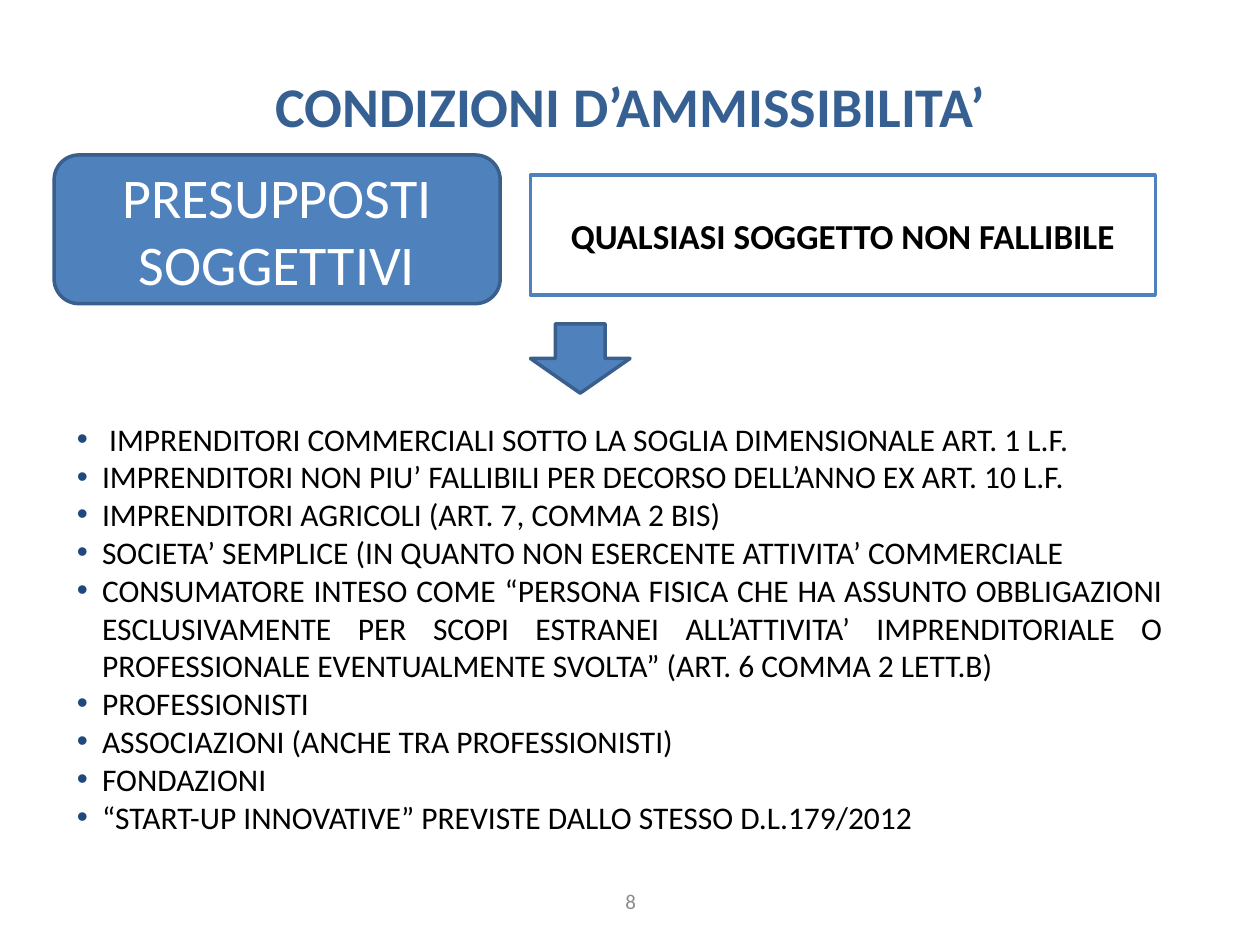
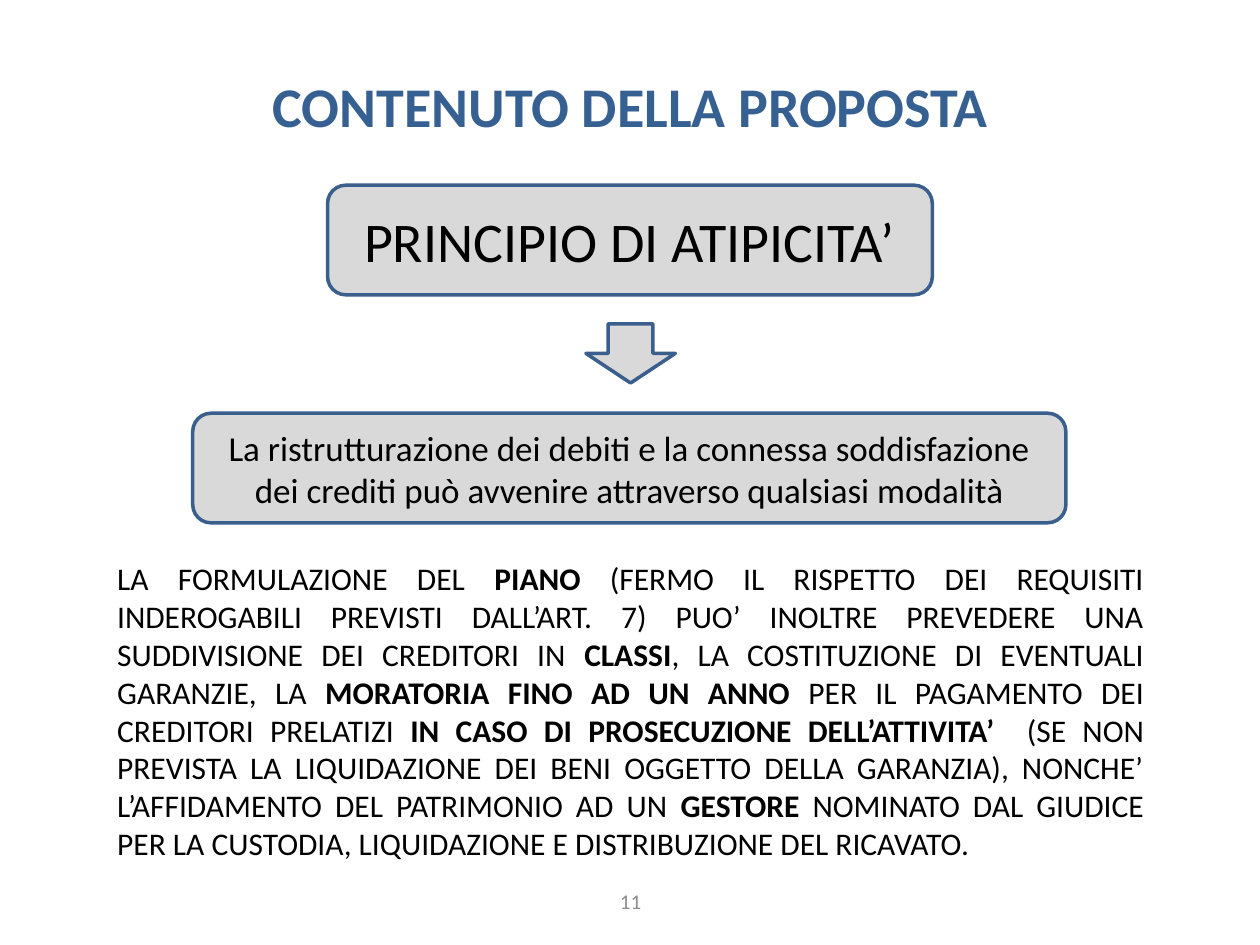
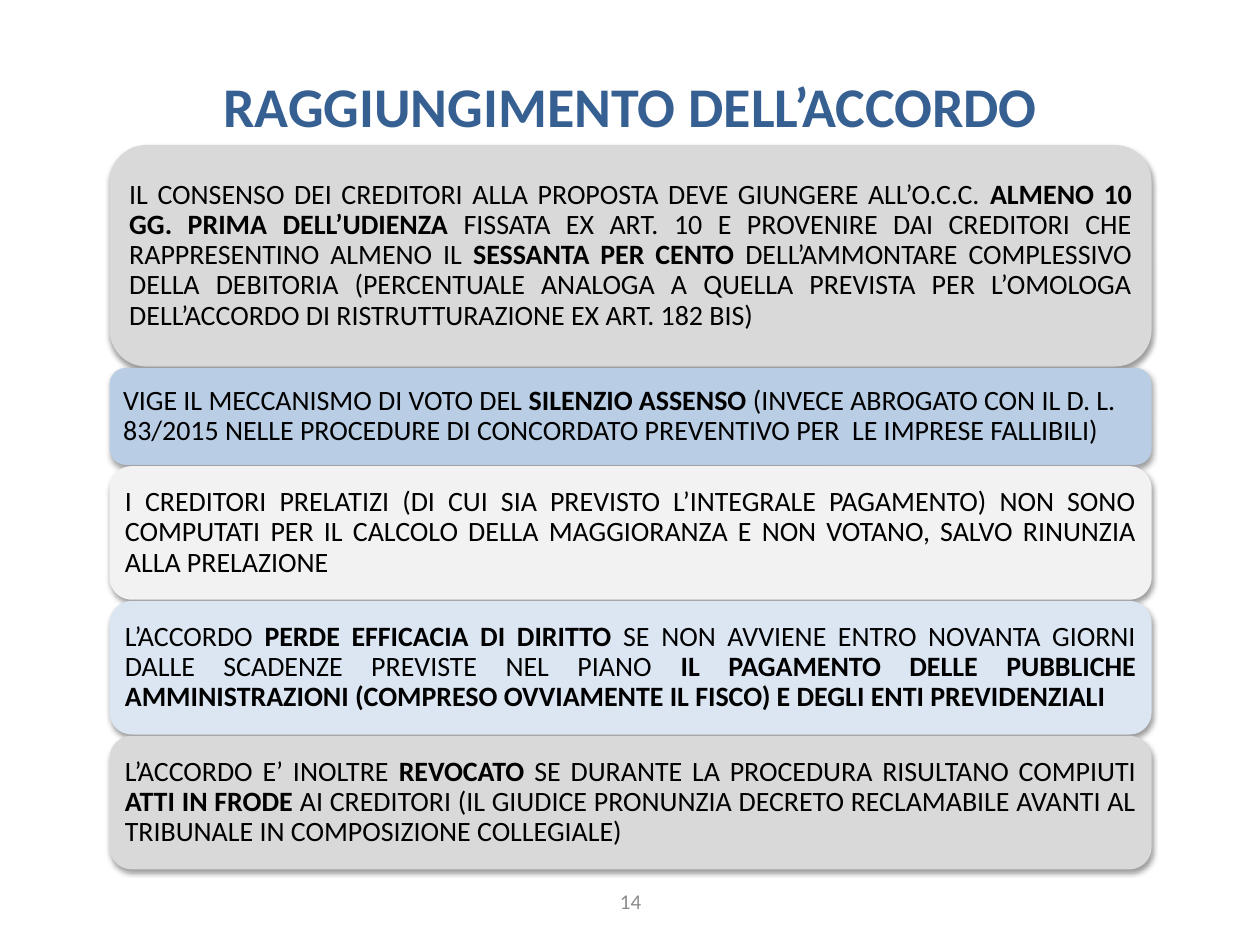
from dataclasses import dataclass

from lxml import etree
from pptx import Presentation
from pptx.dml.color import RGBColor
from pptx.enum.shapes import MSO_SHAPE
from pptx.enum.text import MSO_ANCHOR, MSO_AUTO_SIZE, PP_ALIGN
from pptx.oxml.ns import qn
from pptx.util import Inches, Pt

ROUND, RECT, ARROW = MSO_SHAPE.ROUNDED_RECTANGLE, MSO_SHAPE.RECTANGLE, MSO_SHAPE.DOWN_ARROW
CENTER, JUSTIFY, LEFT = PP_ALIGN.CENTER, PP_ALIGN.JUSTIFY, PP_ALIGN.LEFT
TOP, MIDDLE = MSO_ANCHOR.TOP, MSO_ANCHOR.MIDDLE

# Shared look
FONT = "Calibri"
BLUE, EDGE, TITLE, BULLET = "4F81BD", "3A5F8C", "376092", "1F497D"
BLACK, WHITE, GREY, PAGE = "000000", "FFFFFF", "D9D9D9", "8C8C8C"
PALE_GREY, MID_BLUE, PALE_BLUE = "F2F2F2", "B9CDE5", "DCE6F2"

# The slide is a grid of 100 columns by 75 rows
COLS, ROWS = 100, 75
prs = Presentation()
prs.slide_width, prs.slide_height = Inches(10), Inches(7.5)


@dataclass
class Box:
    col: float
    row: float
    cols: float
    rows: float

    def emu(self) -> tuple:
        w, h = prs.slide_width / COLS, prs.slide_height / ROWS
        return int(self.col * w), int(self.row * h), int(self.cols * w), int(self.rows * h)


@dataclass
class Style:
    size: float
    color: str = BLACK
    bold: bool = False
    align: PP_ALIGN = CENTER
    anchor: MSO_ANCHOR = MIDDLE
    spacing: float = 1.0
    bullet: bool = False


@dataclass
class Panel:
    box: Box
    text: str = ""
    style: Style | None = None
    kind: MSO_SHAPE = ROUND
    fill: str = GREY
    line: str | None = EDGE
    shadow: bool = False
    inset: float | None = None


TITLE_BOX, PAGE_BOX = Box(2.4, 2.1, 95.3, 12.5), Box(34.2, 69.5, 31.7, 4)
TITLE_STYLE = Style(32, TITLE, bold=True)
PAGE_STYLE = Style(12, PAGE)
LIST_STYLE = Style(18, align=JUSTIFY, anchor=TOP, bullet=True)
PROSE_STYLE = Style(18, align=JUSTIFY)
BAR_STYLE = Style(16, align=JUSTIFY, spacing=0.9)
BAR_LEFT_STYLE = Style(16, align=LEFT, spacing=0.9)


def rgb(color: str) -> RGBColor:
    return RGBColor.from_string(color)


def set_bullet(p, on: bool) -> None:
    pPr = p._p.get_or_add_pPr()
    indent = Inches(0.2) if on else 0
    pPr.set("marL", str(indent))
    pPr.set("indent", str(-indent))
    if not on:
        etree.SubElement(pPr, qn("a:buNone"))
        return
    color = etree.SubElement(pPr, qn("a:buClr"))
    etree.SubElement(color, qn("a:srgbClr"), val=BULLET)
    etree.SubElement(pPr, qn("a:buFont"), typeface="Arial")
    etree.SubElement(pPr, qn("a:buChar"), char="•")


def write(sp, lines: list[str], style: Style) -> None:
    """Write one paragraph per line; parts between ** are bold."""
    tf = sp.text_frame
    for name, value in {"word_wrap": True, "auto_size": MSO_AUTO_SIZE.NONE,
                        "vertical_anchor": style.anchor}.items():
        setattr(tf, name, value)
    for i, line in enumerate(lines):
        p = tf.add_paragraph() if i else tf.paragraphs[0]
        for name, value in {"alignment": style.align, "line_spacing": style.spacing,
                            "space_before": Pt(0), "space_after": Pt(0)}.items():
            setattr(p, name, value)
        set_bullet(p, style.bullet)
        for n, part in enumerate(line.split("**")):
            if not part:
                continue
            r = p.add_run()
            r.text = part
            for name, value in {"name": FONT, "size": Pt(style.size),
                                "bold": style.bold or n % 2 == 1}.items():
                setattr(r.font, name, value)
            r.font.color.rgb = rgb(style.color)


def place(sp, box: Box) -> None:
    for name, value in zip(("left", "top", "width", "height"), box.emu()):
        setattr(sp, name, value)


def add_shadow(sp) -> None:
    effects = sp._element.spPr.find(qn("a:effectLst"))
    outer = etree.SubElement(effects, qn("a:outerShdw"), blurRad=str(Pt(3.1)),
                             dist=str(Pt(1.6)), dir="5400000", rotWithShape="0")
    color = etree.SubElement(outer, qn("a:srgbClr"), val=BLACK)
    etree.SubElement(color, qn("a:alpha"), val="38000")


def add_panel(slide, panel: Panel) -> None:
    sp = slide.shapes.add_shape(panel.kind, *panel.box.emu())
    sp.shadow.inherit = False
    sp.fill.solid()
    sp.fill.fore_color.rgb = rgb(panel.fill)
    if panel.line:
        sp.line.color.rgb = rgb(panel.line)
        sp.line.width = Pt(2)
    else:
        sp.line.fill.background()
    if panel.shadow:
        add_shadow(sp)
    if panel.inset is not None:
        for side in ("left", "top", "right", "bottom"):
            setattr(sp.text_frame, f"margin_{side}", Inches(panel.inset))
    if panel.style:
        write(sp, [panel.text], panel.style)


def add_slide(title: str, page: int, panels: list[Panel], body: list[str] | None = None,
              body_box: Box | None = None, body_style: Style | None = None) -> None:
    slide = prs.slides.add_slide(prs.slide_layouts[1 if body else 5])
    place(slide.shapes.title, TITLE_BOX)
    write(slide.shapes.title, [title], TITLE_STYLE)
    write(slide.shapes.add_textbox(*PAGE_BOX.emu()), [str(page)], PAGE_STYLE)
    for panel in panels:
        add_panel(slide, panel)
    if body:
        sp = slide.placeholders[1]
        place(sp, body_box)
        write(sp, body, body_style)


def stack_bars(bars: list[tuple]) -> list[Panel]:
    """Stack full-width bars of (rows, fill, style, text) with equal gaps."""
    panels, row, gap = [], 11.5, 0.1
    for rows, fill, style, text in bars:
        panels.append(Panel(Box(8.7, row, 82.7, rows), text, style, fill=fill,
                            line=None, shadow=True, inset=0.07))
        row += rows + gap
    return panels


# Slide 1: who may apply
add_slide(
    "CONDIZIONI D’AMMISSIBILITA’", 8,
    [Panel(Box(4.3, 12.3, 35.4, 11.8), "PRESUPPOSTI SOGGETTIVI", Style(32, WHITE), fill=BLUE),
     Panel(Box(42.1, 13.9, 49.6, 9.5), "QUALSIASI SOGGETTO NON FALLIBILE",
           Style(20, bold=True), RECT, WHITE, BLUE),
     Panel(Box(42.1, 25.7, 7.9, 5.5), kind=ARROW, fill=BLUE)],
    [" IMPRENDITORI COMMERCIALI SOTTO LA SOGLIA DIMENSIONALE ART. 1 L.F.",
     "IMPRENDITORI NON PIU’ FALLIBILI PER DECORSO DELL’ANNO EX ART. 10 L.F.",
     "IMPRENDITORI AGRICOLI (ART. 7, COMMA 2 BIS)",
     "SOCIETA’ SEMPLICE (IN QUANTO NON ESERCENTE ATTIVITA’ COMMERCIALE",
     "CONSUMATORE INTESO COME “PERSONA FISICA CHE HA ASSUNTO OBBLIGAZIONI ESCLUSIVAMENTE "
     "PER SCOPI ESTRANEI ALL’ATTIVITA’ IMPRENDITORIALE O PROFESSIONALE EVENTUALMENTE "
     "SVOLTA” (ART. 6 COMMA 2 LETT.B)",
     "PROFESSIONISTI",
     "ASSOCIAZIONI (ANCHE TRA PROFESSIONISTI)",
     "FONDAZIONI",
     "“START-UP INNOVATIVE” PREVISTE DALLO STESSO D.L.179/2012"],
    Box(5.1, 32.8, 88.2, 34.3), LIST_STYLE)

# Slide 2: what the proposal contains
add_slide(
    "CONTENUTO DELLA PROPOSTA", 11,
    [Panel(Box(26, 14.7, 48, 8.7), "PRINCIPIO DI ATIPICITA’", Style(32)),
     Panel(Box(15.3, 32.8, 69.3, 8.7),
           "La ristrutturazione dei debiti e la connessa soddisfazione dei crediti "
           "può avvenire attraverso qualsiasi modalità", Style(20)),
     Panel(Box(46.5, 25.7, 7.1, 4.7), kind=ARROW)],
    ["LA FORMULAZIONE DEL **PIANO **(FERMO IL RISPETTO DEI REQUISITI INDEROGABILI PREVISTI "
     "DALL’ART. 7) PUO’ INOLTRE PREVEDERE UNA SUDDIVISIONE DEI CREDITORI IN **CLASSI**, "
     "LA COSTITUZIONE DI EVENTUALI GARANZIE, LA **MORATORIA FINO AD UN ANNO** PER IL "
     "PAGAMENTO DEI CREDITORI PRELATIZI **IN CASO DI PROSECUZIONE DELL’ATTIVITA’ ** (SE NON "
     "PREVISTA LA LIQUIDAZIONE DEI BENI OGGETTO DELLA GARANZIA), NONCHE’ L’AFFIDAMENTO DEL "
     "PATRIMONIO AD UN **GESTORE** NOMINATO DAL GIUDICE PER LA CUSTODIA, LIQUIDAZIONE E "
     "DISTRIBUZIONE DEL RICAVATO."],
    Box(8.3, 43.8, 83.5, 25.2), PROSE_STYLE)

# Slide 3: how the agreement is reached
add_slide("RAGGIUNGIMENTO DELL’ACCORDO", 14, stack_bars([
    (17.6, GREY, BAR_STYLE,
     "IL CONSENSO DEI CREDITORI ALLA PROPOSTA DEVE GIUNGERE ALL’O.C.C. **ALMENO 10 GG. PRIMA "
     "DELL’UDIENZA** FISSATA EX ART. 10 E PROVENIRE DAI CREDITORI CHE RAPPRESENTINO ALMENO IL "
     "**SESSANTA PER CENTO** DELL’AMMONTARE COMPLESSIVO DELLA DEBITORIA (PERCENTUALE ANALOGA "
     "A QUELLA PREVISTA PER L’OMOLOGA DELL’ACCORDO DI RISTRUTTURAZIONE EX ART. 182 BIS)"),
    (7.7, MID_BLUE, BAR_LEFT_STYLE,
     "VIGE IL MECCANISMO DI VOTO DEL **SILENZIO ASSENSO **(INVECE ABROGATO CON IL D. L. 83/2015 "
     "NELLE PROCEDURE DI CONCORDATO PREVENTIVO PER  LE IMPRESE FALLIBILI)"),
    (10.6, PALE_GREY, BAR_STYLE,
     "I CREDITORI PRELATIZI (DI CUI SIA PREVISTO L’INTEGRALE PAGAMENTO) NON SONO COMPUTATI PER "
     "IL CALCOLO DELLA MAGGIORANZA E NON VOTANO, SALVO RINUNZIA ALLA PRELAZIONE"),
    (10.6, PALE_BLUE, BAR_STYLE,
     "L’ACCORDO **PERDE EFFICACIA DI DIRITTO** SE NON AVVIENE ENTRO NOVANTA GIORNI DALLE "
     "SCADENZE PREVISTE NEL PIANO **IL PAGAMENTO DELLE PUBBLICHE AMMINISTRAZIONI (COMPRESO "
     "OVVIAMENTE IL FISCO) E DEGLI ENTI PREVIDENZIALI **"),
    (10.6, GREY, BAR_STYLE,
     "L’ACCORDO E’ INOLTRE **REVOCATO** SE DURANTE LA PROCEDURA RISULTANO COMPIUTI **ATTI IN "
     "FRODE **AI CREDITORI (IL GIUDICE PRONUNZIA DECRETO RECLAMABILE AVANTI AL TRIBUNALE IN "
     "COMPOSIZIONE COLLEGIALE)"),
]))

prs.save("out.pptx")
